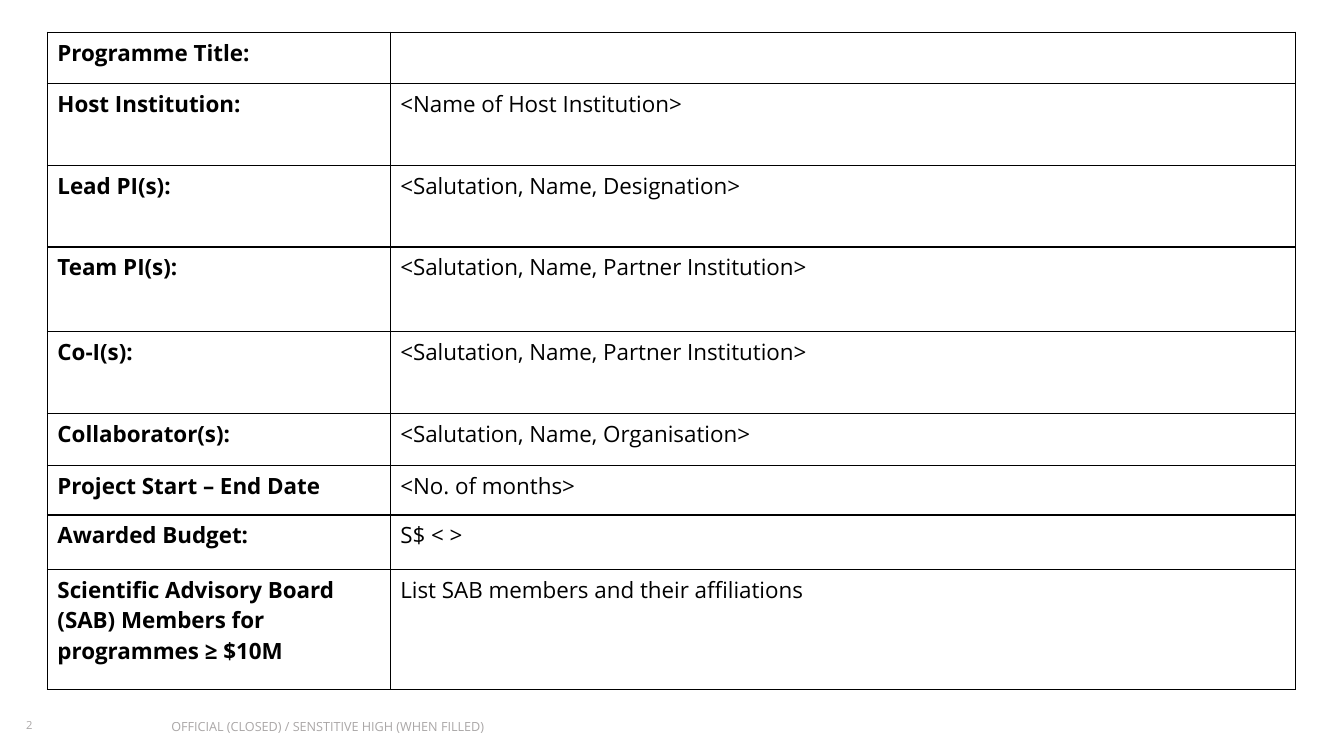
import dataclasses

import lxml.etree
import pptx
import pptx.dml.color
import pptx.oxml.ns
import pptx.util

BLACK = pptx.dml.color.RGBColor(0x00, 0x00, 0x00)
GREY = pptx.dml.color.RGBColor(0x76, 0x71, 0x71)
FONT = "Open Sans"

# The page is a fine grid of square units.
GRID_UNIT = pptx.util.Inches(0.01)
PAGE_COLUMNS, PAGE_ROWS = 1333, 750
TABLE_LEFT, TABLE_TOP = 47, 32
LABEL_COLUMNS, VALUE_COLUMNS = 340, 898
FOOTER_TOP, FOOTER_ROWS = 713, 19


@dataclasses.dataclass(frozen=True)
class Entry:
    label: str
    value: str
    rows: int


@dataclasses.dataclass(frozen=True)
class Footer:
    text: str
    left: int
    columns: int
    size: int


ENTRIES = [
    Entry("Programme Title:", "", 51),
    Entry("Host Institution:", "<Name of Host Institution>", 81),
    Entry("Lead PI(s):", "<Salutation, Name, Designation>", 81),
    Entry("Team PI(s):", "<Salutation, Name, Partner Institution>", 84),
    Entry("Co-I(s):", "<Salutation, Name, Partner Institution>", 81),
    Entry("Collaborator(s):", "<Salutation, Name, Organisation>", 52),
    Entry("Project Start – End Date", "<No. of months>", 49),
    Entry("Awarded Budget:", "S$ < >", 54),
    Entry("Scientific Advisory Board (SAB) Members for programmes ≥ $10M",
          "List SAB members and their affiliations", 119),
]
FOOTERS = [
    Footer("2", 26, 79, 8),
    Footer("OFFICIAL (CLOSED) / SENSTITIVE HIGH (WHEN FILLED)", 170, 533, 9),
]


def grid(units: int) -> pptx.util.Emu:
    return pptx.util.Emu(units * GRID_UNIT)


def add_span(para, text: str, size: int, color, bold: bool = False):
    span = para.add_run()
    span.text = text
    span.font.name = FONT
    span.font.size = pptx.util.Pt(size)
    span.font.bold = bold
    span.font.color.rgb = color
    return span


def add_borders(cell) -> None:
    properties = cell._tc.get_or_add_tcPr()
    name = pptx.oxml.ns.qn
    for side in ("a:lnL", "a:lnR", "a:lnT", "a:lnB"):
        line = lxml.etree.SubElement(properties, name(side), w=str(pptx.util.Pt(1)))
        fill = lxml.etree.SubElement(line, name("a:solidFill"))
        lxml.etree.SubElement(fill, name("a:srgbClr"), val=str(BLACK))


def fill_cell(cell, text: str, bold: bool) -> None:
    add_borders(cell)
    cell.fill.background()
    if text:
        add_span(cell.text_frame.paragraphs[0], text, 16, BLACK, bold)


def add_programme_table(page) -> None:
    frame = page.shapes.add_table(
        len(ENTRIES), 2, grid(TABLE_LEFT), grid(TABLE_TOP),
        grid(LABEL_COLUMNS + VALUE_COLUMNS), grid(sum(entry.rows for entry in ENTRIES)))
    table = frame.table
    table.first_row = False
    table.horz_banding = False
    table.columns[0].width = grid(LABEL_COLUMNS)
    table.columns[1].width = grid(VALUE_COLUMNS)
    for index, entry in enumerate(ENTRIES):
        table.rows[index].height = grid(entry.rows)
        fill_cell(table.cell(index, 0), entry.label, True)
        fill_cell(table.cell(index, 1), entry.value, False)


def add_footer(page, footer: Footer) -> None:
    box = page.shapes.add_textbox(
        grid(footer.left), grid(FOOTER_TOP), grid(footer.columns), grid(FOOTER_ROWS))
    text = box.text_frame
    text.word_wrap = True
    text.margin_left = text.margin_right = text.margin_top = text.margin_bottom = 0
    span = add_span(text.paragraphs[0], footer.text, footer.size, GREY)
    color = span._r.find(".//" + pptx.oxml.ns.qn("a:srgbClr"))
    lxml.etree.SubElement(color, pptx.oxml.ns.qn("a:alpha"), val="61000")


def main() -> None:
    deck = pptx.Presentation()
    deck.slide_width = grid(PAGE_COLUMNS)
    deck.slide_height = grid(PAGE_ROWS)
    page = deck.slides.add_slide(deck.slide_layouts[6])
    for footer in FOOTERS:
        add_footer(page, footer)
    add_programme_table(page)
    deck.save("out.pptx")


if __name__ == "__main__":
    main()
